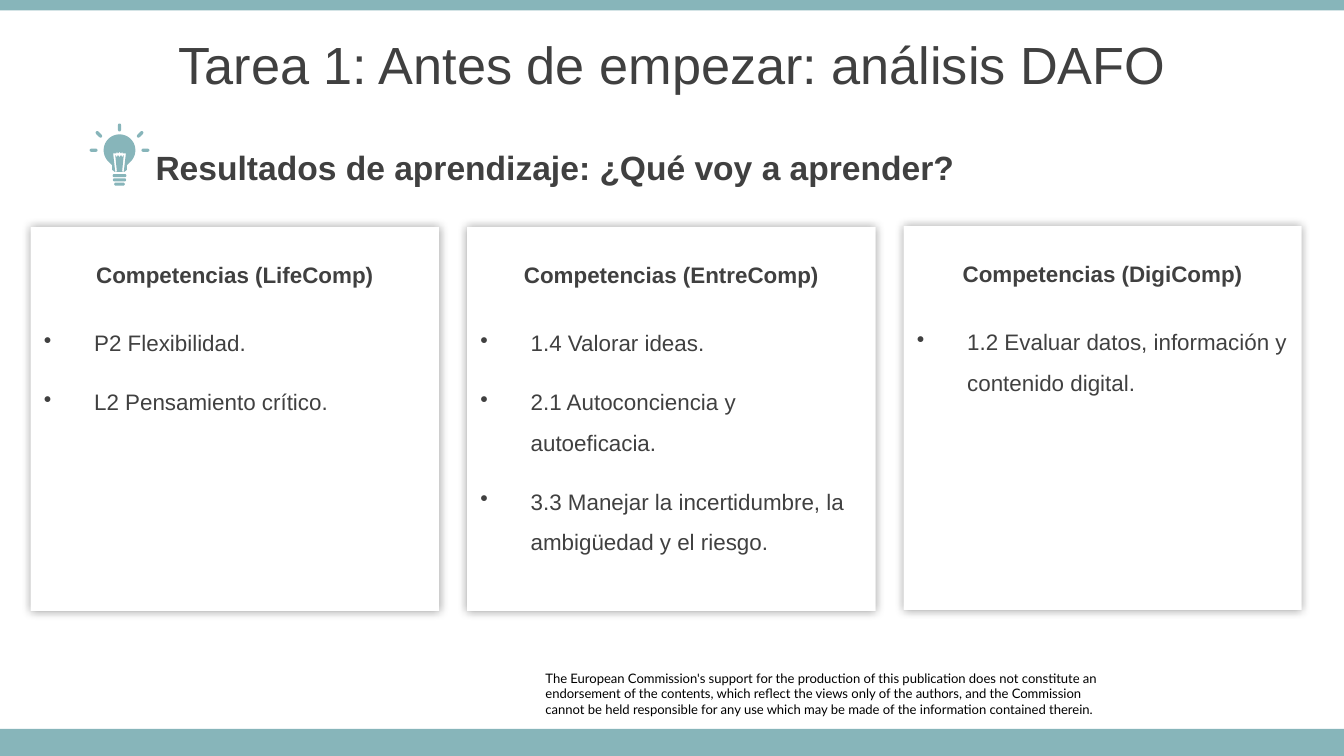
"""Build the learning outcomes slide for the SWOT analysis task."""
from dataclasses import dataclass
from math import cos, radians, sin

from lxml import etree
from pptx import Presentation
from pptx import util as u
from pptx.dml.color import RGBColor
from pptx.enum import shapes, text
from pptx.oxml import ns


@dataclass(frozen=True)
class Theme:
    """Hold the colours, fonts and type sizes."""
    teal: str = "87B5BA"
    white: str = "FFFFFF"
    ink: str = "404040"
    black: str = "000000"
    sans: str = "Arial"
    small_sans: str = "Lato"
    title: int = 28
    subtitle: int = 18
    body: int = 12
    notice: int = 7


THEME = Theme()
MIDDLE = text.MSO_ANCHOR.MIDDLE
CENTER = text.PP_ALIGN.CENTER
NOTICE = [
    "The European Commission's support for the production of this publication "
    "does not constitute an endorsement of the contents, which reflect the "
    "views only of the authors, and the Commission",
    "cannot be held responsible for any use which may be made of the "
    "information contained therein.",
]
CARDS = [
    ("Competencias (LifeComp)", 4.29, 7.72,
     ["P2 Flexibilidad.", "L2 Pensamiento crítico."]),
    ("Competencias (EntreComp)", 4.29, 7.72,
     ["1.4 Valorar ideas.", "2.1 Autoconciencia y autoeficacia.",
      "3.3 Manejar la incertidumbre, la ambigüedad y el riesgo."]),
    ("Competencias (DigiComp)", 4.27, 7.52,
     ["1.2 Evaluar datos, información y contenido digital."]),
]


def apply(target, values):
    """Set each named attribute on the target."""
    for name, value in values.items():
        setattr(target, name, value)


def paint(shape, color):
    """Give a shape a plain fill without line or shadow."""
    shape.shadow.inherit = False
    shape.fill.solid()
    shape.fill.fore_color.rgb = RGBColor.from_string(color)
    shape.line.fill.background()


def add_block(page, left, top, width, height, color):
    """Add a filled rectangle."""
    block = page.shapes.add_shape(
        shapes.MSO_SHAPE.RECTANGLE, u.Cm(left), u.Cm(top), u.Cm(width), u.Cm(height))
    paint(block, color)
    return block


def write(para, words, size, color=THEME.ink, font=THEME.sans, bold=False, layout=None):
    """Write one formatted span into a paragraph."""
    apply(para, layout or {})
    span = para.add_run()
    span.text = words
    apply(span.font, {"name": font, "size": u.Pt(size), "bold": bold})
    span.font.color.rgb = RGBColor.from_string(color)


def add_text(page, left, top, width, height, lines, frame=None, **style):
    """Add a wrapped text box with one paragraph per line."""
    box = page.shapes.add_textbox(u.Cm(left), u.Cm(top), u.Cm(width), u.Cm(height))
    apply(box.text_frame, {"word_wrap": True, **(frame or {})})
    for index, line in enumerate(lines):
        para = box.text_frame.add_paragraph() if index else box.text_frame.paragraphs[0]
        write(para, line, **style)


def add_bullet(para):
    """Give a paragraph a hanging round bullet."""
    props = para._p.get_or_add_pPr()
    indent = u.Cm(0.95)
    props.set("marL", str(indent))
    props.set("indent", str(-indent))
    etree.SubElement(props, ns.qn("a:buChar"), char="•")


def add_glow(shape):
    """Put a soft, centred shadow around a shape."""
    effects = shape._element.spPr.find(ns.qn("a:effectLst"))
    shadow = etree.SubElement(
        effects, ns.qn("a:outerShdw"), blurRad=str(u.Pt(5)), dist="0", dir="0",
        algn="ctr", rotWithShape="0")
    color = etree.SubElement(shadow, ns.qn("a:srgbClr"), val=THEME.black)
    etree.SubElement(color, ns.qn("a:alpha"), val="40000")


def add_card(page, left, top, width, heading, items):
    """Add a competence card with a heading and bullets."""
    card = add_block(page, left, top, width, 7.26, THEME.white)
    add_glow(card)
    frame = card.text_frame
    apply(frame, {"word_wrap": True, "vertical_anchor": text.MSO_ANCHOR.TOP,
                  "margin_top": u.Cm(0.65)})
    write(frame.paragraphs[0], heading, THEME.body, bold=True,
          layout={"alignment": CENTER, "space_after": u.Pt(15)})
    for item in items:
        para = frame.add_paragraph()
        add_bullet(para)
        write(para, item, THEME.body,
              layout={"alignment": text.PP_ALIGN.LEFT, "line_spacing": 1.5,
                      "space_after": u.Pt(10)})


def arc(x, y, radius, start, end, step):
    """Return points along a circular arc."""
    return [(x + radius * cos(radians(a)), y + radius * sin(radians(a)))
            for a in range(start, end + step, step)]


def capsule(x, y, length, angle):
    """Return the outline of a round-ended bar."""
    radius = 0.03
    reach = length / 2 - radius
    dx, dy = reach * cos(radians(angle)), reach * sin(radians(angle))
    return (arc(x + dx, y + dy, radius, angle - 90, angle + 90, 30)
            + arc(x - dx, y - dy, radius, angle + 90, angle + 270, 30))


def add_bulb(page, x, y):
    """Draw the light bulb around its glass centre."""
    glass = arc(0, 0, 0.3, -225, 45, 9) + [
        (0.14, 0.28), (0.14, 0.37), (0.09, 0.41),
        (-0.09, 0.41), (-0.14, 0.37), (-0.14, 0.28)]
    filament = [(-0.08, 0.41), (-0.12, 0.06), (-0.06, 0.06), (-0.05, 0.03),
                (-0.03, 0.06), (0, 0.03), (0.03, 0.06), (0.05, 0.03),
                (0.06, 0.06), (0.12, 0.06), (0.08, 0.41), (0.05, 0.4),
                (0.08, 0.09), (0.05, 0.13), (0.03, 0.09), (0, 0.13),
                (-0.03, 0.09), (-0.05, 0.13), (-0.08, 0.09), (-0.05, 0.4)]
    rays = [(-0.49, 0, 0), (-0.39, -0.3, 45), (0, -0.43, 90), (0.39, -0.3, 135), (0.49, 0, 0)]
    base = [(0.48, 0.26), (0.56, 0.25), (0.64, 0.2)]
    outlines = [glass, filament]
    outlines += [capsule(dx, dy, 0.15, angle) for dx, dy, angle in rays]
    outlines += [capsule(0, dy, length, 0) for dy, length in base]
    outlines = [[(u.Cm(x + dx), u.Cm(y + dy)) for dx, dy in outline] for outline in outlines]
    builder = page.shapes.build_freeform(*outlines[0][0])
    for index, outline in enumerate(outlines):
        if index:
            builder.move_to(*outline[0])
        builder.add_line_segments(outline[1:], close=True)
    paint(builder.convert_to_shape(), THEME.teal)


def main():
    """Build and save the slide."""
    deck = Presentation()
    apply(deck, {"slide_width": u.Cm(25.4), "slide_height": u.Cm(14.29)})
    page = deck.slides.add_slide(deck.slide_layouts[6])
    margins = {f"margin_{side}": 0 for side in ("left", "top", "right", "bottom")}
    add_text(page, 10.31, 12.67, 10.59, 0.89, NOTICE, margins, size=THEME.notice,
             color=THEME.black, font=THEME.small_sans)
    add_block(page, 0, 13.78, 25.4, 0.51, THEME.teal)
    add_block(page, 0, 0, 25.4, 0.2, THEME.teal)
    add_text(page, 0, 0.4, 25.4, 1.6, ["Tarea 1: Antes de empezar: análisis DAFO"],
             {"vertical_anchor": MIDDLE}, size=THEME.title, layout={"alignment": CENTER})
    add_bulb(page, 2.26, 2.84)
    add_text(page, 2.69, 2.76, 16, 0.79, ["Resultados de aprendizaje: ¿Qué voy a aprender?"],
             {"vertical_anchor": MIDDLE}, size=THEME.subtitle, bold=True)
    for column, (heading, top, width, items) in enumerate(CARDS):
        add_card(page, 0.58 + 8.25 * column, top, width, heading, items)
    deck.save("out.pptx")


if __name__ == "__main__":
    main()
